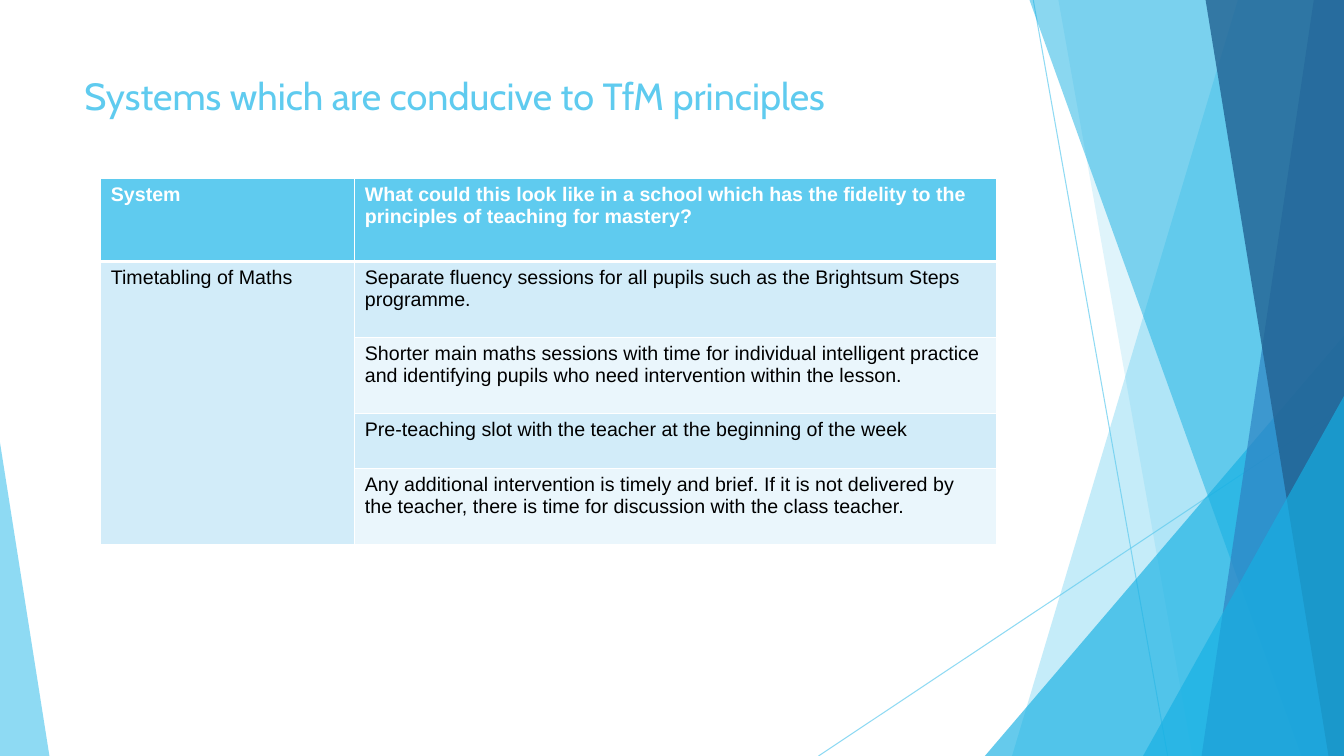
from pptx import Presentation
from pptx.dml.color import RGBColor
from pptx.enum.shapes import MSO_CONNECTOR, MSO_SHAPE
from pptx.enum.text import MSO_ANCHOR
from pptx.oxml.ns import qn
from pptx.util import Inches, Pt
from lxml import etree

STRAIGHT = MSO_CONNECTOR.STRAIGHT
TRIANGLE = MSO_SHAPE.ISOSCELES_TRIANGLE
TOP = MSO_ANCHOR.TOP

WHITE = RGBColor(0xFF, 0xFF, 0xFF)
BLACK = RGBColor(0x00, 0x00, 0x00)
SKY = RGBColor(0x5F, 0xCB, 0xEF)
CYAN = RGBColor(0x16, 0xB0, 0xE3)
BLUE = RGBColor(0x2E, 0x83, 0xC3)
NAVY = RGBColor(0x22, 0x62, 0x92)
BAND_DARK = RGBColor(0xD2, 0xEC, 0xF9)
BAND_LIGHT = RGBColor(0xEA, 0xF6, 0xFC)

WIDTH, HEIGHT = Inches(13.33), Inches(7.5)

TITLE = "Systems which are conducive to TfM principles"
HEADINGS = (
    "System",
    "What could this look like in a school which has the fidelity to the "
    "principles of teaching for mastery?",
)
SYSTEM = "Timetabling of Maths"
PRACTICES = (
    "Separate fluency sessions for all pupils such as the Brightsum Steps programme.",
    "Shorter main maths sessions with time for individual intelligent practice "
    "and identifying pupils who need intervention within the lesson.",
    "Pre-teaching slot with the teacher at the beginning of the week",
    "Any additional intervention is timely and brief. If it is not delivered by "
    "the teacher, there is time for discussion with the class teacher.",
)
COLUMN_SHARES = (18.9, 47.78)
ROW_SHARES = (11, 10.07, 10.07, 7.2, 10.07)


def across(percent):
    return round(WIDTH * percent / 100)


def down(percent):
    return round(HEIGHT * percent / 100)


def set_opacity(shape, percent):
    for color in shape._element.spPr.iter(qn("a:srgbClr")):
        etree.SubElement(color, qn("a:alpha"), val=str(percent * 1000))


def paint(shape, color, opacity):
    shape.shadow.inherit = False
    shape.fill.solid()
    shape.fill.fore_color.rgb = color
    shape.line.fill.background()
    set_opacity(shape, opacity)


def add_ray(page, x1, y1, x2, y2):
    ray = page.shapes.add_connector(STRAIGHT, across(x1), down(y1), across(x2), down(y2))
    ray.line.color.rgb = SKY
    ray.line.width = Pt(0.75)
    set_opacity(ray, 70)
    etree.SubElement(ray._element.spPr, qn("a:effectLst"))


def add_facet(page, top_left, bottom_left, color, opacity):
    """Full-height panel with a slanted left side, reaching the right edge."""
    builder = page.shapes.build_freeform(across(top_left), 0)
    builder.add_line_segments([(WIDTH, 0), (WIDTH, HEIGHT), (across(bottom_left), HEIGHT)])
    paint(builder.convert_to_shape(), color, opacity)


def add_corner(page, left, width, top, apex, color, opacity):
    """Right-angled triangle standing on the bottom edge."""
    corner = page.shapes.add_shape(
        TRIANGLE, across(left), down(top), across(width), down(100 - top))
    corner.adjustments[0] = apex
    paint(corner, color, opacity)


def format_text(frame, font_name, size, color, bold=False):
    for para in frame.paragraphs:
        for span in para.runs:
            span.font.name = font_name
            span.font.size = Pt(size)
            span.font.color.rgb = color
            span.font.bold = bold


def add_title(page):
    box = page.shapes.add_textbox(across(5.55), down(8.93), across(70.5), down(19.2))
    frame = box.text_frame
    frame.word_wrap = True
    frame.vertical_anchor = TOP
    frame.text = TITLE
    format_text(frame, "Cabin", 27, SKY)


def add_borders(cell, top, bottom):
    properties = cell._tc.get_or_add_tcPr()
    for side, points in (("L", 1), ("R", 1), ("T", top), ("B", bottom)):
        line = etree.SubElement(properties, qn(f"a:ln{side}"), w=str(Pt(points)))
        fill = etree.SubElement(line, qn("a:solidFill"))
        etree.SubElement(fill, qn("a:srgbClr"), val=str(WHITE))


def style_cell(cell, row, column):
    is_header = row == 0
    add_borders(cell, top=3 if row == 1 else 1, bottom=3 if is_header else 1)
    cell.fill.solid()
    if is_header:
        cell.fill.fore_color.rgb = SKY
    else:
        is_dark = column == 0 or row % 2 == 1
        cell.fill.fore_color.rgb = BAND_DARK if is_dark else BAND_LIGHT
    format_text(cell.text_frame, "Arial", 14, WHITE if is_header else BLACK, is_header)


def add_systems_table(page):
    rows = [HEADINGS] + [(SYSTEM if i == 0 else "", text) for i, text in enumerate(PRACTICES)]
    table = page.shapes.add_table(
        len(rows), len(HEADINGS), across(7.5), down(23.6),
        across(sum(COLUMN_SHARES)), down(sum(ROW_SHARES))).table
    for column, share in zip(table.columns, COLUMN_SHARES):
        column.width = across(share)
    for row, share in zip(table.rows, ROW_SHARES):
        row.height = down(share)
    for r, texts in enumerate(rows):
        for c, text in enumerate(texts):
            cell = table.cell(r, c)
            cell.text = text
            style_cell(cell, r, c)
    table.cell(1, 0).merge(table.cell(len(rows) - 1, 0))


def add_backdrop(page):
    add_ray(page, 76.88, 0, 86.88, 100)
    add_ray(page, 100, 53.73, 60.9, 100)
    add_facet(page, 92.1, 75.3, SKY, 36)
    add_facet(page, 78.75, 88.73, SKY, 20)
    add_corner(page, 73.28, 26.72, 44.4, 1, CYAN, 66)
    add_facet(page, 76.6, 96.83, CYAN, 50)
    add_facet(page, 97.75, 89.4, BLUE, 70)
    add_facet(page, 89.7, 98.85, NAVY, 80)
    add_corner(page, 85.05, 14.95, 52.4, 1, CYAN, 66)
    add_corner(page, 0, 3.68, 58.53, 0, SKY, 70)


def main():
    deck = Presentation()
    deck.slide_width, deck.slide_height = WIDTH, HEIGHT
    page = deck.slides.add_slide(deck.slide_layouts[6])
    add_backdrop(page)
    add_title(page)
    add_systems_table(page)
    deck.save("out.pptx")


if __name__ == "__main__":
    main()
